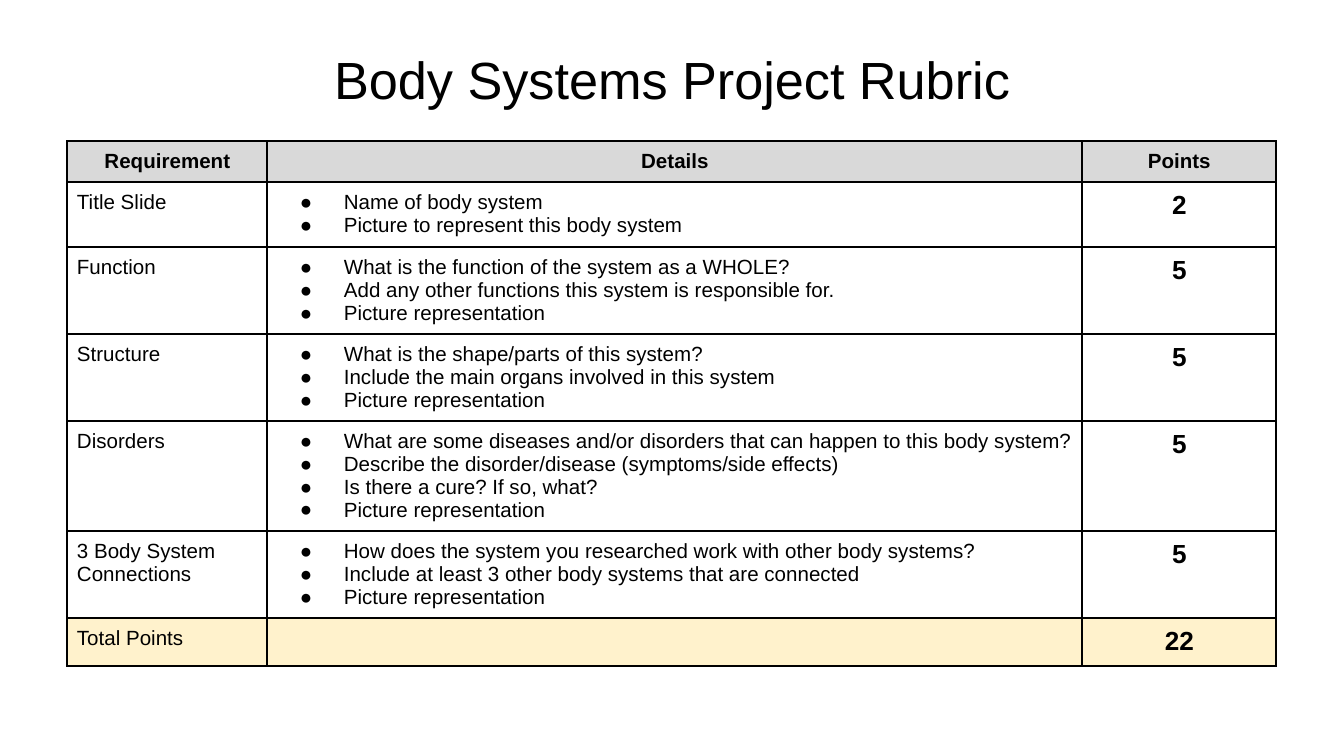
from pptx import Presentation
from pptx.dml.color import RGBColor as RGB
from pptx.enum.text import MSO_ANCHOR as Anchor, PP_ALIGN as Align
from pptx.oxml.ns import qn
from pptx.util import Pt
from lxml.etree import SubElement as Sub

UNIT = 914400 / 134.4
BLACK = RGB(0, 0, 0)
WHITE = RGB(255, 255, 255)
GREY = RGB(0xD9, 0xD9, 0xD9)
CREAM = RGB(0xFF, 0xF2, 0xCC)

TITLE = "Body Systems Project Rubric"
HEADS = ["Requirement", "Details", "Points"]
PICTURE = "Picture representation"
TASKS = [
    ("Title Slide",
     ["Name of body system", "Picture to represent this body system"], 2),
    ("Function",
     ["What is the function of the system as a WHOLE?",
      "Add any other functions this system is responsible for.", PICTURE], 5),
    ("Structure",
     ["What is the shape/parts of this system?",
      "Include the main organs involved in this system", PICTURE], 5),
    ("Disorders",
     ["What are some diseases and/or disorders that can happen to this body system?",
      "Describe the disorder/disease (symptoms/side effects)",
      "Is there a cure? If so, what?", PICTURE], 5),
    ("3 Body System Connections",
     ["How does the system you researched work with other body systems?",
      "Include at least 3 other body systems that are connected", PICTURE], 5),
]
COLS = [200, 815, 194]
ROWS = [41, 65, 87, 87, 110, 87, 48]


def px(n):
    return round(n * UNIT)


def write(para, text, size, bold=False, align=Align.LEFT):
    para.alignment = align
    run = para.add_run()
    run.text = text
    font = run.font
    font.name, font.size, font.bold = "Arial", Pt(size), bold
    font.color.rgb = BLACK


def bullet(para):
    props = para._p.get_or_add_pPr()
    props.set("marL", str(px(67)))
    props.set("indent", str(-px(44)))
    Sub(Sub(props, qn("a:buClr")), qn("a:srgbClr"), val=str(BLACK))
    Sub(props, qn("a:buSzPts"), val="1100")
    Sub(props, qn("a:buFont"), typeface="Arial")
    Sub(props, qn("a:buChar"), char="●")


def border(cell):
    props = cell._tc.get_or_add_tcPr()
    for at, side in enumerate(("lnL", "lnR", "lnT", "lnB")):
        line = props.makeelement(qn("a:" + side), {"w": str(Pt(1))})
        Sub(Sub(line, qn("a:solidFill")), qn("a:srgbClr"), val=str(BLACK))
        props.insert(at, line)


def style(cell, fill):
    cell.fill.solid()
    cell.fill.fore_color.rgb = fill
    cell.margin_left = px(10)
    cell.margin_right = cell.margin_top = px(9)
    cell.margin_bottom = px(2)
    cell.vertical_anchor = Anchor.TOP
    border(cell)


def add_title(slide, left, top, width, height):
    box = slide.shapes.add_textbox(px(left), px(top), px(width), px(height))
    frame = box.text_frame
    frame.word_wrap = True
    frame.vertical_anchor = Anchor.TOP
    frame.margin_left = frame.margin_right = px(13)
    frame.margin_top = frame.margin_bottom = px(13)
    write(frame.paragraphs[0], TITLE, 28, align=Align.CENTER)


def add_rubric(slide, left, top):
    frame = slide.shapes.add_table(len(ROWS), len(COLS), px(left), px(top),
                                   px(sum(COLS)), px(sum(ROWS)))
    table = frame.table
    table.first_row = table.horz_banding = False
    for col, width in zip(table.columns, COLS):
        col.width = px(width)
    for row, height in zip(table.rows, ROWS):
        row.height = px(height)

    for r in range(len(ROWS)):
        fill = {0: GREY, len(ROWS) - 1: CREAM}.get(r, WHITE)
        for c in range(len(COLS)):
            style(table.cell(r, c), fill)

    for c, head in enumerate(HEADS):
        write(table.cell(0, c).text_frame.paragraphs[0], head, 11, True,
              Align.CENTER)

    total = sum(points for _, _, points in TASKS)
    for r, (name, details, points) in enumerate(
            TASKS + [("Total Points", [], total)], 1):
        label, body, score = (table.cell(r, c).text_frame for c in range(3))
        write(label.paragraphs[0], name, 11)
        write(score.paragraphs[0], str(points), 14, True, Align.CENTER)
        for n, detail in enumerate(details):
            para = body.add_paragraph() if n else body.paragraphs[0]
            write(para, detail, 11)
            bullet(para)
        if not details:
            Sub(body.paragraphs[0]._p, qn("a:endParaRPr"), sz="1100")


def main():
    deck = Presentation()
    deck.slide_width, deck.slide_height = px(1344), px(756)
    slide = deck.slides.add_slide(deck.slide_layouts[6])
    add_title(slide, 46, 34, 1252, 85)
    add_rubric(slide, 67, 141)
    deck.save("out.pptx")


if __name__ == "__main__":
    main()
